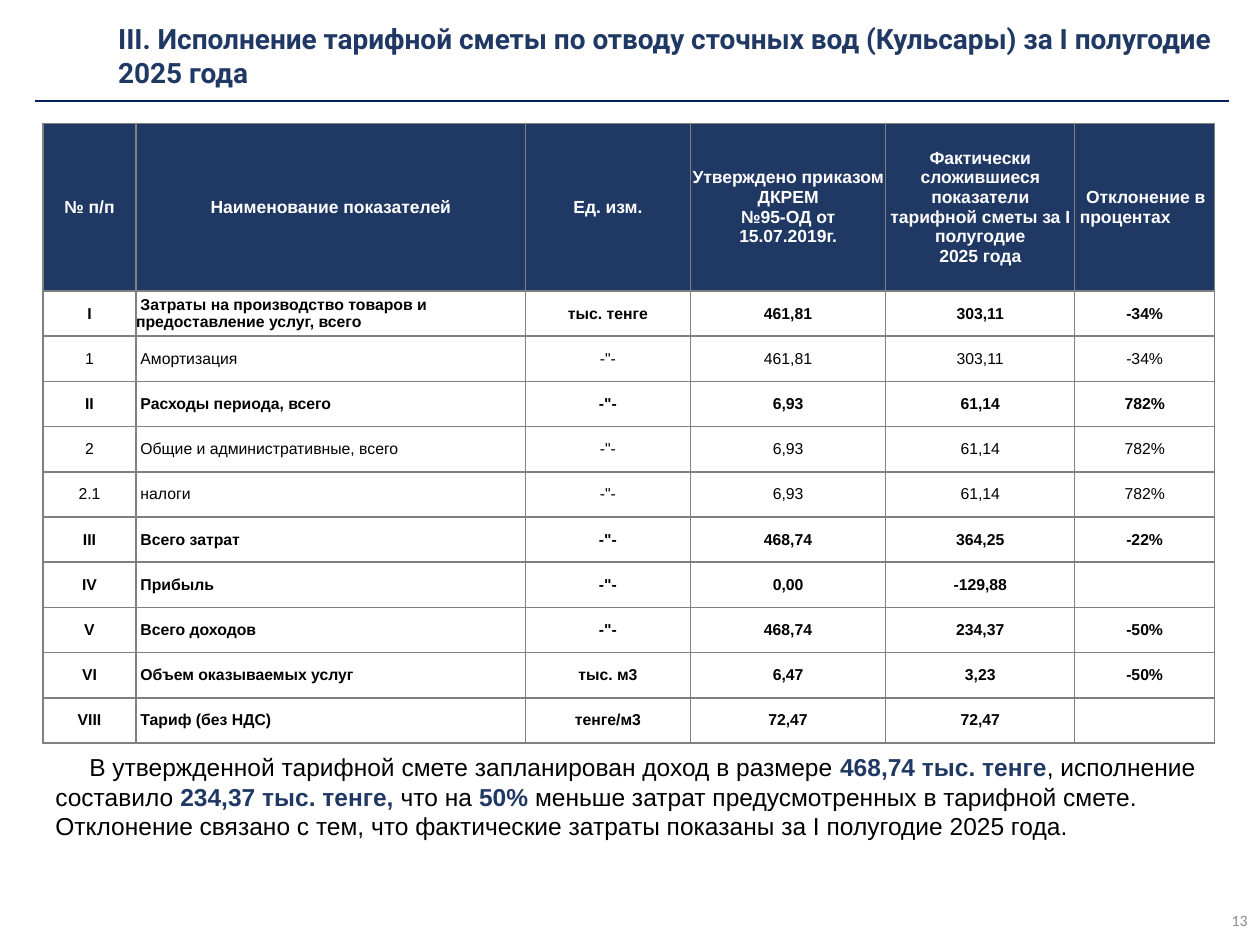
from pptx import Presentation
from pptx.dml.color import RGBColor
from pptx.enum.shapes import MSO_CONNECTOR
from pptx.enum.text import MSO_ANCHOR, PP_ALIGN
from pptx.oxml import parse_xml
from pptx.oxml.ns import nsdecls
from pptx.util import Inches, Pt

NAVY = RGBColor(0x20, 0x38, 0x64)
RULE = RGBColor(0x00, 0x20, 0x60)
GRAY = RGBColor(0x80, 0x80, 0x80)
PALE = RGBColor(0x8C, 0x8C, 0x8C)
BLACK = RGBColor(0, 0, 0)
WHITE = RGBColor(255, 255, 255)
LEFT, MID, RIGHT = PP_ALIGN.LEFT, PP_ALIGN.CENTER, PP_ALIGN.RIGHT
TOP, CENTER = MSO_ANCHOR.TOP, MSO_ANCHOR.MIDDLE
STRAIGHT = MSO_CONNECTOR.STRAIGHT

HEAD = ["№ п/п", "Наименование показателей", "Ед. изм.",
        "Утверждено приказом ДКРЕМ\v№95-ОД от 15.07.2019г.",
        "Фактически сложившиеся показатели тарифной сметы за I полугодие\v2025 года",
        "Отклонение в процентах"]
DITTO = '-"-'
ROWS = [
    ["I", "Затраты на производство товаров и предоставление услуг, всего",
     "тыс. тенге", "461,81", "303,11", "-34%"],
    ["1", "Амортизация", DITTO, "461,81", "303,11", "-34%"],
    ["II", "Расходы периода, всего", DITTO, "6,93", "61,14", "782%"],
    ["2", "Общие и административные, всего", DITTO, "6,93", "61,14", "782%"],
    ["2.1", "налоги", DITTO, "6,93", "61,14", "782%"],
    ["III", "Всего затрат", DITTO, "468,74", "364,25", "-22%"],
    ["IV", "Прибыль", DITTO, "0,00", "-129,88", ""],
    ["V", "Всего доходов", DITTO, "468,74", "234,37", "-50%"],
    ["VI", "Объем оказываемых услуг", "тыс. м3", "6,47", "3,23", "-50%"],
    ["VIII", "Тариф (без НДС)", "тенге/м3", "72,47", "72,47", ""],
]
WIDTHS = [7.4, 30.9, 13.1, 15.5, 15, 11.1]
HEAD_ROW, BODY_ROW = 13.3, 3.59
# Plain and highlighted parts take turns
NOTE = ["В утвержденной тарифной смете запланирован доход в размере ",
        "468,74 тыс. тенге", ", исполнение составило ",
        "234,37 тыс. тенге, ", "что на ", "50% ",
        "меньше затрат предусмотренных в тарифной смете. Отклонение связано с тем, "
        "что фактические затраты показаны за I полугодие 2025 года."]


def unit(n):
    """Length of n cells in a grid of 100 columns by 75 rows."""
    return Inches(n / 10)


class Page:
    font = "Arial"

    def __init__(self, deck):
        self.slide = deck.slides.add_slide(deck.slide_layouts[6])

    def style(self, run, size, color, bold=False, font=None):
        run.font.name = font or self.font
        run.font.size = Pt(size)
        run.font.bold = bold
        run.font.color.rgb = color

    def indent(self, para, first, left=0):
        props = para._p.get_or_add_pPr()
        props.set("marL", str(unit(left)))
        props.set("indent", str(unit(first)))

    def text(self, box, parts, size, colors, font=None, bold=False,
             align=LEFT, anchor=CENTER, first=0):
        frame = self.slide.shapes.add_textbox(*map(unit, box)).text_frame
        frame.word_wrap = True
        frame.vertical_anchor = anchor
        para = frame.paragraphs[0]
        para.alignment = align
        if first:
            self.indent(para, first)
        for i, part in enumerate(parts):
            run = para.add_run()
            run.text = part
            self.style(run, size, colors[i % 2], bold or i % 2 == 1, font)

    def border(self, cell):
        props = cell._tc.get_or_add_tcPr()
        for i, side in enumerate("LRTB"):
            props.insert(i, parse_xml(
                f'<a:ln{side} {nsdecls("a")} w="{Pt(1)}"><a:solidFill>'
                f'<a:srgbClr val="{GRAY}"/></a:solidFill></a:ln{side}>'))

    def cell(self, cell, text, size, color, bold, align, fill=None):
        cell.margin_left = cell.margin_right = 0
        cell.margin_top = cell.margin_bottom = 0
        cell.vertical_anchor = CENTER
        if fill is None:
            cell.fill.background()
        else:
            cell.fill.solid()
            cell.fill.fore_color.rgb = fill
        self.border(cell)
        cell.text_frame.text = text
        para = cell.text_frame.paragraphs[0]
        para.alignment = align
        for run in para.runs:
            self.style(run, size, color, bold)
        return para

    def table(self, left, top, head, rows, widths):
        high = HEAD_ROW + BODY_ROW * len(rows)
        box = map(unit, (left, top, sum(widths), high))
        grid = self.slide.shapes.add_table(len(rows) + 1, len(widths), *box).table
        for col, width in zip(grid.columns, widths):
            col.width = unit(width)
        for i, row in enumerate(grid.rows):
            row.height = unit(BODY_ROW if i else HEAD_ROW)
        # Header
        last = len(head) - 1
        for c, text in enumerate(head):
            para = self.cell(grid.cell(0, c), text, 10, WHITE, True,
                             LEFT if c == last else MID, NAVY)
            if c == last:
                self.indent(para, 0.5, 0.4)
        # Body: roman numerals mark the bold totals
        for r, row in enumerate(rows, 1):
            bold = row[0].isalpha()
            for c, text in enumerate(row):
                para = self.cell(grid.cell(r, c), text, 9, BLACK, bold,
                                 LEFT if c == 1 else MID)
                if c == 1:
                    self.indent(para, 0.35)

    def line(self, left, right, y, color):
        line = self.slide.shapes.add_connector(
            STRAIGHT, unit(left), unit(y), unit(right), unit(y))
        line.line.color.rgb = color
        line.line.width = Pt(1)
        line._element.spPr.append(parse_xml(f'<a:effectLst {nsdecls("a")}/>'))


def main():
    deck = Presentation()
    deck.slide_width, deck.slide_height = unit(100), unit(75)
    page = Page(deck)
    # Summary under the table
    page.text((3.4, 59.2, 92.9, 8.1), NOTE, 14, (BLACK, NAVY), anchor=TOP, first=2.7)
    # Tariff table
    page.table(3.4, 9.8, HEAD, ROWS, WIDTHS)
    # Page number
    page.text((77.5, 71, 22.5, 4), ["13"], 9, (PALE,), "Calibri", align=RIGHT)
    # Title and rule
    page.text((8.4, 1.4, 89.3, 6),
              ["III. Исполнение тарифной сметы по отводу сточных вод (Кульсары) "
               "за I полугодие 2025 года"], 16, (NAVY,), "Roboto", bold=True)
    page.line(2.8, 97.5, 8, RULE)
    deck.save("out.pptx")


if __name__ == "__main__":
    main()
